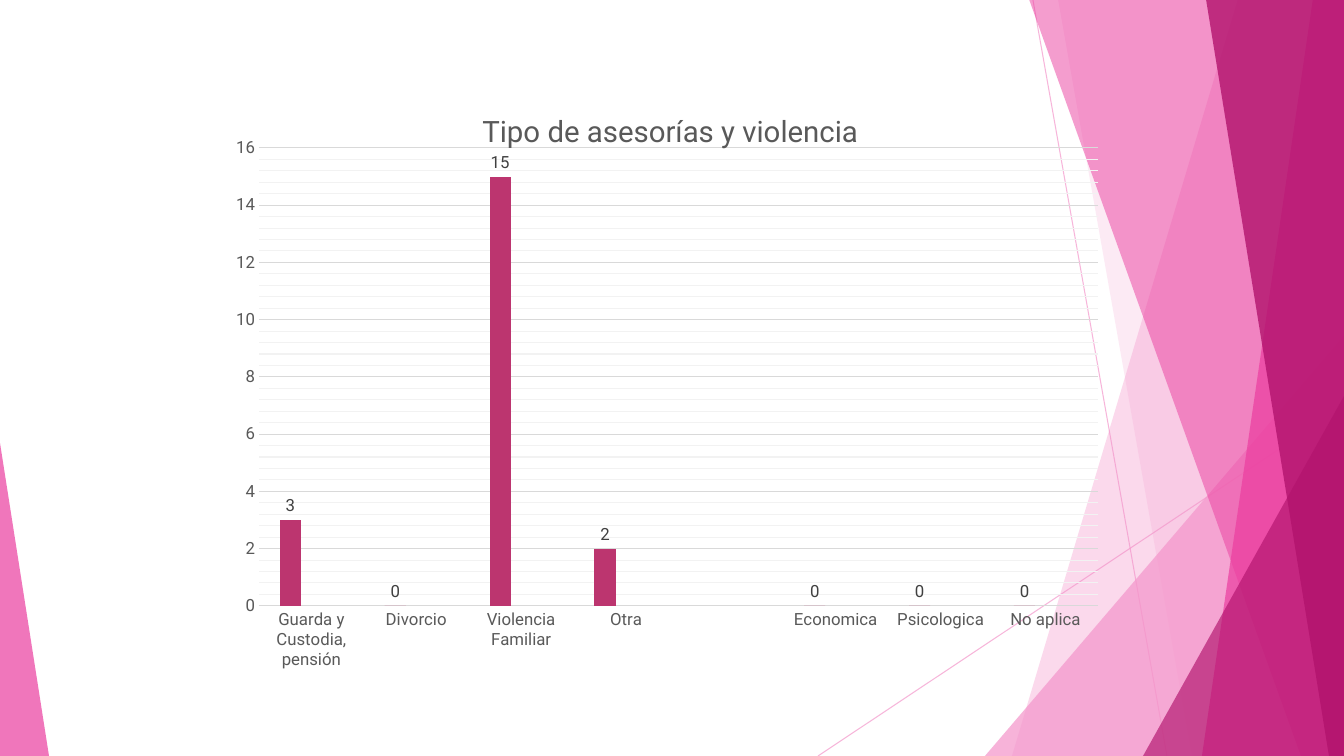
import dataclasses

import lxml.etree
import pptx
import pptx.chart.chart
import pptx.chart.data
import pptx.dml.color
import pptx.dml.fill
import pptx.dml.line
import pptx.enum.chart
import pptx.enum.shapes
import pptx.oxml
import pptx.oxml.ns
import pptx.slide
import pptx.text.text
import pptx.util

WIDE, HIGH = 1344, 756
SCALE = 12192000 / WIDE
TOP = -1


@dataclasses.dataclass(frozen=True)
class Theme:
    light: str = "F496CB"
    pink: str = "EB3D9F"
    dark: str = "B2136D"
    bars: tuple[str, ...] = ("BC356F", "F27E19", "BC80E0")
    text: str = "595959"
    label: str = "404040"
    grid: str = "D9D9D9"
    minor: str = "F2F2F2"
    font: str = "Roboto"
    title: int = 21
    small: int = 12
    rule: float = 0.75


@dataclasses.dataclass(frozen=True)
class Ray:
    start: tuple[int, int]
    end: tuple[int, int]


@dataclasses.dataclass(frozen=True)
class Band:
    """A panel from its slanted left edge to the right slide edge."""
    top: int
    foot: int
    color: str
    alpha: int


@dataclasses.dataclass(frozen=True)
class Wedge:
    left: int
    top: int
    width: int
    tip: int
    color: str
    alpha: int


@dataclasses.dataclass(frozen=True)
class Box:
    left: int
    top: int
    width: int
    height: int


THEME = Theme()
CHART = Box(224, 80, 896, 598)
RAYS = [Ray((1033, 0), (1167, HIGH)), Ray((WIDE, 406), (818, HIGH))]

# Facets from back to front
FACETS = [
    Band(1238, 1012, THEME.light, 36),
    Band(1058, 1192, THEME.light, 20),
    Wedge(985, 336, 359, 1, THEME.light, 72),
    Band(1029, 1301, THEME.pink, 50),
    Band(1313, 1202, THEME.pink, 70),
    Band(1206, 1329, THEME.dark, 80),
    Wedge(1143, 396, 201, 1, THEME.dark, 66),
    Wedge(0, 443, 49, 0, THEME.pink, 70),
]

KINDS = ["Guarda y Custodia, pensión", "Divorcio", "Violencia Familiar", "Otra",
         "", "Economica", "Psicologica", "No aplica"]
COUNTS = [3, 0, 15, 2, None, 0, 0, 0]


def px(size: int) -> pptx.util.Emu:
    return pptx.util.Emu(round(size * SCALE))


def rgb(color: str) -> pptx.dml.color.RGBColor:
    return pptx.dml.color.RGBColor.from_string(color)


def paint(fill: pptx.dml.fill.FillFormat, node, color: str, alpha: int) -> None:
    """Set a solid colour and its opacity in percent."""
    fill.solid()
    fill.fore_color.rgb = rgb(color)
    tone = node.xpath(".//a:solidFill/a:srgbClr")[0]
    mark = lxml.etree.SubElement(tone, pptx.oxml.ns.qn("a:alpha"))
    mark.set("val", str(alpha * 1000))


def draw_ray(slide: pptx.slide.Slide, ray: Ray) -> None:
    line = slide.shapes.add_connector(
        pptx.enum.shapes.MSO_CONNECTOR.STRAIGHT,
        *map(px, ray.start), *map(px, ray.end))
    line.line.width = pptx.util.Pt(THEME.rule)
    props = line.element.spPr
    paint(line.line.fill, props, THEME.light, 70)
    lxml.etree.SubElement(props, pptx.oxml.ns.qn("a:effectLst"))


def draw_facet(slide: pptx.slide.Slide, facet: Band | Wedge) -> None:
    if isinstance(facet, Band):
        form = slide.shapes.build_freeform(px(facet.top), px(TOP))
        ends = [(WIDE, TOP), (WIDE, HIGH), (facet.foot, HIGH)]
        form.add_line_segments([(px(x), px(y)) for x, y in ends], close=True)
        shape = form.convert_to_shape()
    else:
        shape = slide.shapes.add_shape(
            pptx.enum.shapes.MSO_SHAPE.ISOSCELES_TRIANGLE, px(facet.left),
            px(facet.top), px(facet.width), px(HIGH - facet.top))
        shape.adjustments[0] = facet.tip
    shape.shadow.inherit = False
    shape.line.fill.background()
    paint(shape.fill, shape.element.spPr, facet.color, facet.alpha)


def style(font: pptx.text.text.Font, size: int, color: str) -> None:
    font.name = THEME.font
    font.size = pptx.util.Pt(size)
    font.bold = False
    font.color.rgb = rgb(color)


def rule(line: pptx.dml.line.LineFormat, color: str) -> None:
    line.width = pptx.util.Pt(THEME.rule)
    line.color.rgb = rgb(color)


def place(node, index: int, x: int, y: int, **parts: str | float) -> None:
    """Fix a chart part at an offset from the chart's corner."""
    for old in node.xpath("./c:layout"):
        node.remove(old)
    parts = {"xMode": "edge", "yMode": "edge", "x": (x - CHART.left) / CHART.width,
             "y": (y - CHART.top) / CHART.height} | parts
    if "w" in parts:
        parts = {"layoutTarget": "inner"} | parts
    rows = "".join(f'<c:{key} val="{val}"/>' for key, val in parts.items())
    space = pptx.oxml.ns.nsdecls("c")
    node.insert(index, pptx.oxml.parse_xml(
        f"<c:layout {space}><c:manualLayout>{rows}</c:manualLayout></c:layout>"))


def style_axes(chart: pptx.chart.chart.Chart) -> None:
    none = pptx.enum.chart.XL_TICK_MARK.NONE
    for axis in (chart.category_axis, chart.value_axis):
        axis.major_tick_mark = axis.minor_tick_mark = none
        style(axis.tick_labels.font, THEME.small, THEME.text)
    rule(chart.category_axis.format.line, THEME.grid)
    axis = chart.value_axis
    axis.minimum_scale, axis.maximum_scale = 0, 16
    axis.major_unit, axis.minor_unit = 2, 0.4
    axis.format.line.fill.background()
    axis.has_major_gridlines = axis.has_minor_gridlines = True
    rule(axis.major_gridlines.format.line, THEME.grid)
    minor = chart.element.xpath(".//c:valAx/c:minorGridlines")[0]
    minor.append(pptx.oxml.parse_xml(
        f'<c:spPr {pptx.oxml.ns.nsdecls("c", "a")}>'
        f'<a:ln w="{pptx.util.Pt(THEME.rule)}"><a:solidFill>'
        f'<a:srgbClr val="{THEME.minor}"/></a:solidFill></a:ln></c:spPr>'))


def draw_chart(slide: pptx.slide.Slide) -> None:
    data = pptx.chart.data.CategoryChartData()
    data.categories = KINDS
    blank = [None] * len(KINDS)
    for number, counts in enumerate((COUNTS, blank, blank), 1):
        data.add_series(f"Series {number}", counts)
    kind = pptx.enum.chart.XL_CHART_TYPE.COLUMN_CLUSTERED
    chart = slide.shapes.add_chart(
        kind, *map(px, dataclasses.astuple(CHART)), data).chart
    chart.has_legend = False
    style(chart.font, THEME.small, THEME.text)

    # Title, plot area and axes
    chart.has_title = True
    frame = chart.chart_title.text_frame
    frame.text = "Tipo de asesorías y violencia"
    style(frame.paragraphs[0].runs[0].font, THEME.title, THEME.text)
    place(chart.element.xpath("./c:chart/c:title")[0], 1, 477, 106)
    place(chart.element.xpath("./c:chart/c:plotArea")[0], 0, 259, 148,
          w=839 / CHART.width, h=458 / CHART.height)
    style_axes(chart)

    # Columns and their labels
    plot = chart.plots[0]
    plot.gap_width, plot.overlap = 199, 0
    plot.vary_by_categories = False
    for series, color in zip(plot.series, THEME.bars):
        series.format.fill.solid()
        series.format.fill.fore_color.rgb = rgb(color)
        labels = series.data_labels
        labels.show_value = True
        labels.position = pptx.enum.chart.XL_LABEL_POSITION.OUTSIDE_END
        style(labels.font, THEME.small, THEME.label)


def main() -> None:
    deck = pptx.Presentation()
    deck.slide_width, deck.slide_height = px(WIDE), px(HIGH)
    slide = deck.slides.add_slide(deck.slide_layouts[6])
    for ray in RAYS:
        draw_ray(slide, ray)
    for facet in FACETS:
        draw_facet(slide, facet)
    draw_chart(slide)
    deck.save("out.pptx")


if __name__ == "__main__":
    main()
